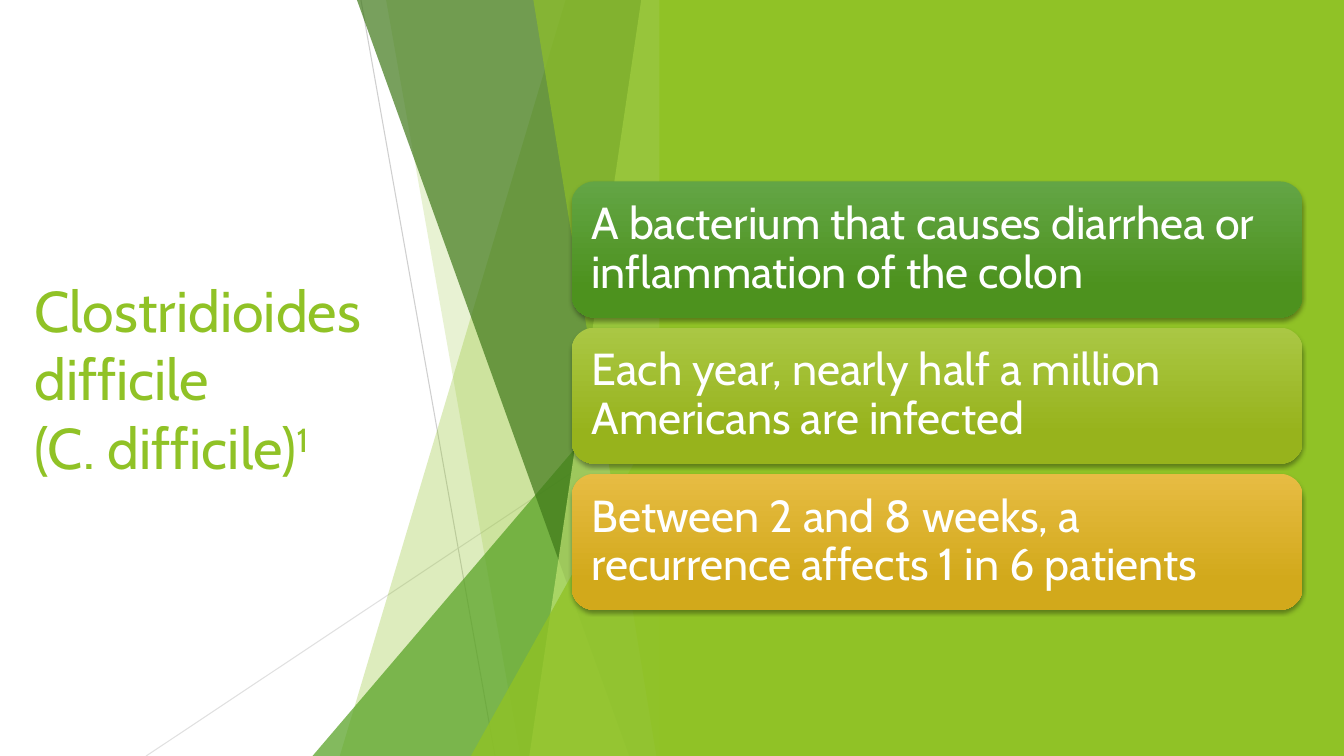
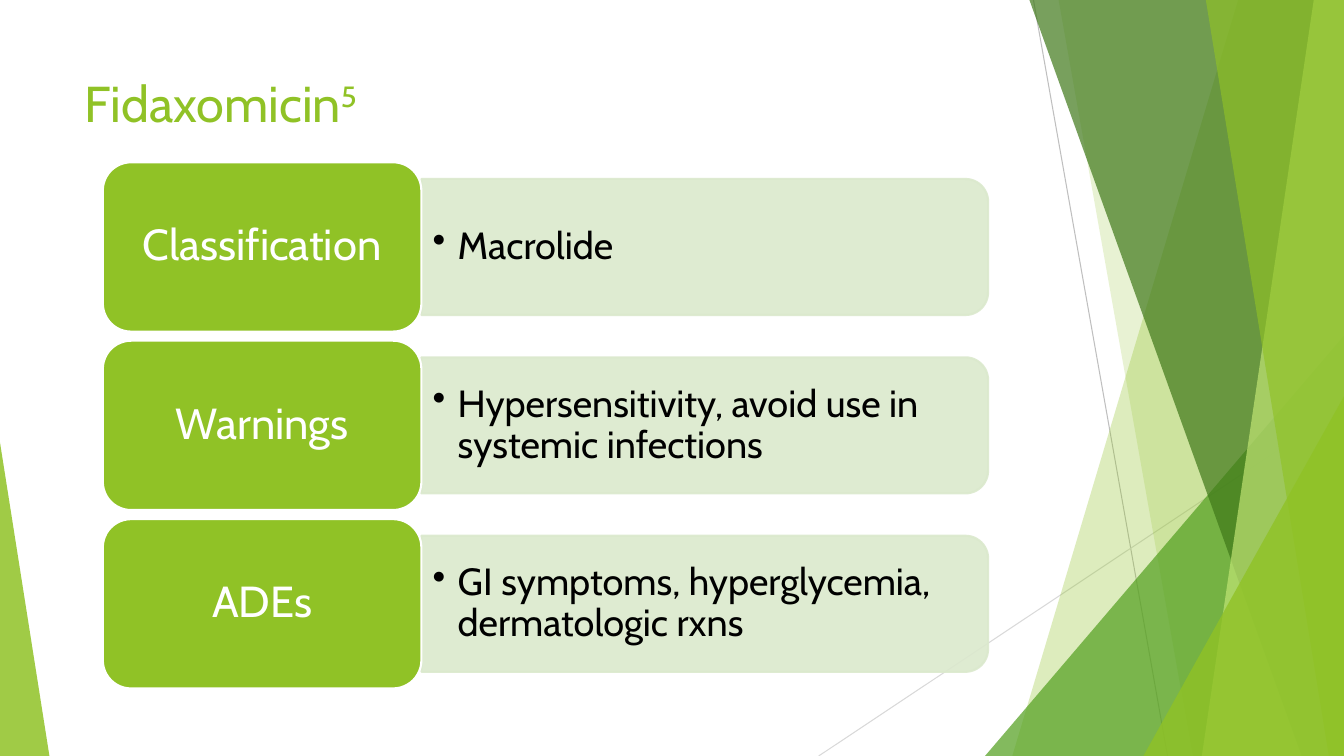
"""Builds two slides on C. difficile and fidaxomicin with a shared facet decoration."""
from lxml.etree import SubElement
from pptx import Presentation
from pptx.dml.color import RGBColor
from pptx.enum.shapes import MSO_CONNECTOR, MSO_SHAPE
from pptx.enum.text import MSO_ANCHOR, MSO_AUTO_SIZE, PP_ALIGN
from pptx.oxml.ns import qn
from pptx.util import Inches, Pt

STRAIGHT = MSO_CONNECTOR.STRAIGHT
RECT, ROUNDED = MSO_SHAPE.RECTANGLE, MSO_SHAPE.ROUNDED_RECTANGLE
TAB, TRIANGLE = MSO_SHAPE.ROUND_2_SAME_RECTANGLE, MSO_SHAPE.ISOSCELES_TRIANGLE
TOP, MIDDLE = MSO_ANCHOR.TOP, MSO_ANCHOR.MIDDLE
LEFT, CENTER = PP_ALIGN.LEFT, PP_ALIGN.CENTER

WIDTH, HEIGHT = 13.33, 7.5
FONT = "Cabin"
GREEN, WHITE, BLACK, PALE = "90C226", "FFFFFF", "000000", "DBE9CD"

RAYS = [((10.25, 0), (11.58, HEIGHT), "BFBFBF"),
        ((WIDTH, 4.03), (8.12, HEIGHT), "D9D9D9")]
FACETS = [("band", 12.28, 10.04, GREEN, 30),
          ("band", 10.5, 11.83, GREEN, 20),
          ("corner", 9.77, 3.33, "54A021", 72),
          ("band", 10.21, 12.91, "3F7819", 70),
          ("band", 13.03, 11.92, "C0E474", 70),
          ("band", 11.96, 13.18, GREEN, 65),
          ("corner", 11.34, 3.93, GREEN, 80)]

FACTS = [("A bacterium that causes diarrhea or inflammation of the colon", "63A545", "4D921E"),
         ("Each year, nearly half a million Americans are infected", "AAC744", "97B31C"),
         ("Between 2 and 8 weeks, a recurrence affects 1 in 6 patients", "E7BC43", "D2A91B")]
DRUG_PROFILE = [("Classification", "Macrolide"),
                ("Warnings", "Hypersensitivity, avoid use in systemic infections"),
                ("ADEs", "GI symptoms, hyperglycemia, dermatologic rxns")]


def rgb(value):
    """Turn a hex string into a colour."""
    return RGBColor.from_string(value)


def set_opacity(item, percent):
    """Give every colour of a shape or connector the same opacity."""
    for color in item.element.spPr.iter(qn("a:srgbClr")):
        SubElement(color, qn("a:alpha"), val=str(percent * 1000))


def paint(item, fill, line=None):
    """Apply a plain fill, an optional outline and no shadow."""
    item.shadow.inherit = False
    item.fill.solid()
    item.fill.fore_color.rgb = rgb(fill)
    if line:
        item.line.color.rgb = rgb(line)
        item.line.width = Pt(1.5)
    else:
        item.line.fill.background()


def add_block(slide, preset, box, fill, line=None):
    """Add a painted preset shape."""
    block = slide.shapes.add_shape(preset, *map(Inches, box))
    paint(block, fill, line)
    return block


def style_text(frame, size, color, align=LEFT, anchor=MIDDLE, insets=(0.1, 0.05), spacing=None):
    """Format the frame, its paragraphs and their runs."""
    frame.word_wrap = True
    frame.auto_size = MSO_AUTO_SIZE.NONE
    frame.vertical_anchor = anchor
    frame.margin_left = frame.margin_right = Inches(insets[0])
    frame.margin_top = frame.margin_bottom = Inches(insets[1])
    for paragraph in frame.paragraphs:
        paragraph.alignment = align
        paragraph.line_spacing = spacing
        for run in paragraph.runs:
            run.font.name = FONT
            run.font.size = Pt(size)
            run.font.color.rgb = rgb(color)


def set_title(slide, text, reference, box, size, anchor):
    """Place the title and close it with a superscript reference number."""
    title = slide.shapes.title
    title.left, title.top, title.width, title.height = map(Inches, box)
    frame = title.text_frame
    frame.text = text
    citation = frame.paragraphs[0].add_run()
    citation.text = reference
    citation.font._element.set("baseline", "30000")
    style_text(frame, size, GREEN, anchor=anchor)


def add_facets(slide, right=WIDTH, ray_opacity=(100, 100)):
    """Draw the rays and translucent facets that end at the given right edge."""
    shift = right - WIDTH
    for (start, end, color), opacity in zip(RAYS, ray_opacity):
        ray = slide.shapes.add_connector(STRAIGHT, Inches(start[0] + shift), Inches(start[1]),
                                         Inches(end[0] + shift), Inches(end[1]))
        ray.line.color.rgb = rgb(color)
        ray.line.width = Pt(0.75)
        SubElement(ray.element.spPr, qn("a:effectLst"))
        set_opacity(ray, opacity)
    for kind, first, second, color, opacity in FACETS:
        left = first + shift
        if kind == "band":
            corners = [(left, 0), (right, 0), (right, HEIGHT), (second + shift, HEIGHT)]
            points = [(Inches(x), Inches(y)) for x, y in corners]
            outline = slide.shapes.build_freeform(*points[0])
            outline.add_line_segments(points[1:])
            facet = outline.convert_to_shape()
            paint(facet, color)
        else:
            facet = add_block(slide, TRIANGLE, (left, second, right - left, HEIGHT - second), color)
            facet.adjustments[0] = 1
        set_opacity(facet, opacity)


def add_fact(slide, row, text, light, dark):
    """Add one gradient card with a soft shadow."""
    card = add_block(slide, ROUNDED, (5.67, 1.8 + 1.45 * row, 7.25, 1.35), dark)
    card.fill.gradient()
    card.fill.gradient_angle = 270
    for stop, position, color in zip(card.fill.gradient_stops, (0, 0.78), (light, dark)):
        stop.position = position
        stop.color.rgb = rgb(color)
    shadow = SubElement(card.element.spPr.find(qn("a:effectLst")), qn("a:outerShdw"),
                        blurRad=str(Pt(3)), dist=str(Pt(2)), dir="5400000", rotWithShape="0")
    shade = SubElement(shadow, qn("a:srgbClr"), val=BLACK)
    SubElement(shade, qn("a:alpha"), val="35000")
    card.text_frame.text = text
    style_text(card.text_frame, 32, WHITE, insets=(0.13, 0.13), spacing=0.9)


def add_profile_row(slide, row, label, detail):
    """Add a label block with its pale detail tab and bulleted text."""
    left, top, label_width, height = 1.02, 1.61 + 1.77 * row, 3.16, 1.68
    tab_left, tab_length, tab_height = left + label_width, 5.62, 1.35
    tab_top = top + (height - tab_height) / 2
    turn = (tab_length - tab_height) / 2
    tab = add_block(slide, TAB, (tab_left + turn, tab_top - turn, tab_height, tab_length), PALE, PALE)
    tab.rotation = 90
    set_opacity(tab, 90)

    note = slide.shapes.add_textbox(*map(Inches, (tab_left, tab_top, 5.55, tab_height)))
    note.text_frame.text = detail
    style_text(note.text_frame, 27, BLACK, insets=(0.11, 0.06), spacing=0.9)
    properties = note.text_frame.paragraphs[0]._p.get_or_add_pPr()
    properties.set("marL", str(Inches(0.25)))
    properties.set("indent", str(-Inches(0.25)))
    SubElement(properties, qn("a:buChar"), char="•")

    heading = add_block(slide, ROUNDED, (left, top, label_width, height), GREEN, WHITE)
    heading.text_frame.text = label
    style_text(heading.text_frame, 31, WHITE, CENTER, insets=(0.13, 0.06), spacing=0.9)


def main():
    """Build and save both slides."""
    deck = Presentation()
    deck.slide_width, deck.slide_height = Inches(WIDTH), Inches(HEIGHT)
    title_only = deck.slide_layouts[5]

    disease = deck.slides.add_slide(title_only)
    set_title(disease, "Clostridioides difficile \v(C. difficile)", "1",
              (0.24, 1.51, 3.88, 4.48), 41, MIDDLE)
    add_facets(disease, 6.66, (75, 80))
    add_block(disease, RECT, (6.54, 0, WIDTH - 6.54, HEIGHT), GREEN)
    for row, fact in enumerate(FACTS):
        add_fact(disease, row, *fact)

    drug = deck.slides.add_slide(title_only)
    set_title(drug, "Fidaxomicin", "5", (0.74, 0.67, 9.4, 1.44), 36, TOP)
    add_facets(drug)
    wedge = add_block(drug, TRIANGLE, (0, 4.39, 0.49, HEIGHT - 4.39), GREEN)
    wedge.adjustments[0] = 0
    set_opacity(wedge, 85)
    for row, entry in enumerate(DRUG_PROFILE):
        add_profile_row(drug, row, *entry)

    deck.save("out.pptx")


if __name__ == "__main__":
    main()
